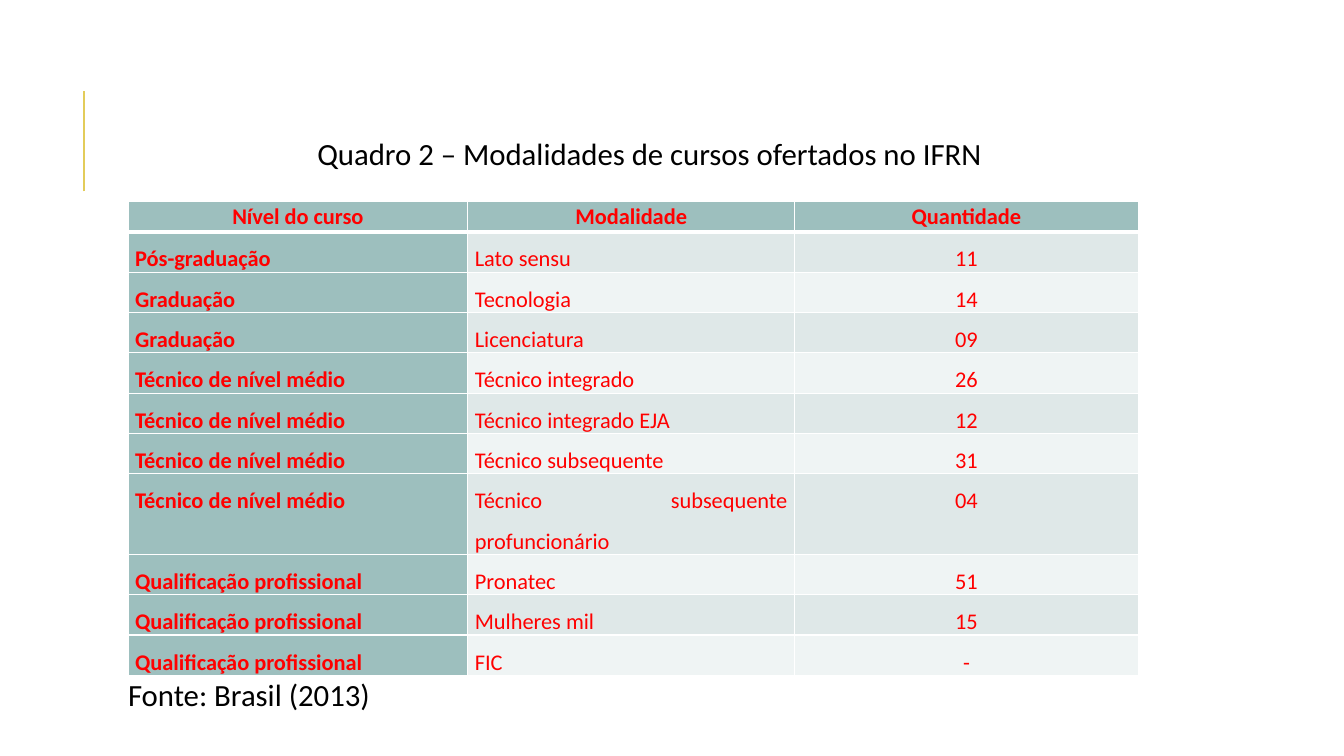
from dataclasses import dataclass

from lxml import etree
from pptx import Presentation
from pptx.dml.color import RGBColor
from pptx.enum.shapes import MSO_CONNECTOR
from pptx.enum.text import PP_ALIGN
from pptx.oxml.ns import qn
from pptx.util import Inches, Pt

LEFT, MID, FULL = PP_ALIGN.LEFT, PP_ALIGN.CENTER, PP_ALIGN.JUSTIFY
LINE = MSO_CONNECTOR.STRAIGHT
WIDE, HIGH = Inches(13.33), Inches(7.5)


@dataclass(frozen=True)
class Theme:
    """Colours, font and type sizes of the slide."""
    font: str = "Calibri"
    ink: str = "000000"
    red: str = "FF0000"
    gold: str = "E3CC5A"
    white: str = "FFFFFF"
    teal: str = "9DBFBE"
    bands: tuple = ("DFE8E8", "EFF4F4")
    big: int = 22
    small: int = 16


THEME = Theme()
COLS = (25.28, 24.31, 25.58)
HEAD = ("Nível do curso", "Modalidade", "Quantidade")
TECH, QUAL = "Técnico de nível médio", "Qualificação profissional"
ROWS = (
    ("Pós-graduação", "Lato sensu", "11"),
    ("Graduação", "Tecnologia", "14"),
    ("Graduação", "Licenciatura", "09"),
    (TECH, "Técnico integrado", "26"),
    (TECH, "Técnico integrado EJA", "12"),
    (TECH, "Técnico subsequente", "31"),
    (TECH, "Técnico subsequente profuncionário", "04"),
    (QUAL, "Pronatec", "51"),
    (QUAL, "Mulheres mil", "15"),
    (QUAL, "FIC", "-"),
)
HEAD_ROW, ROW, TALL_ROW, TALL = 4, 5.2, 9.87, 7


def across(share):
    """Turn a percentage of the slide's width into a length."""
    return round(WIDE * share / 100)


def down(share):
    """Turn a percentage of the slide's height into a length."""
    return round(HIGH * share / 100)


def write(frame, text, size=THEME.big, color=THEME.ink, bold=False,
          align=LEFT, space=0.8):
    """Put one formatted paragraph into a text frame."""
    para = frame.paragraphs[0]
    para.alignment, para.line_spacing = align, space
    run = para.add_run()
    run.text = text
    run.font.name, run.font.size, run.font.bold = THEME.font, Pt(size), bold
    run.font.color.rgb = RGBColor.from_string(color)


def label(slide, text, left, top, width, **form):
    """Add a one-line text box."""
    box = slide.shapes.add_textbox(across(left), down(top), across(width), down(5.3))
    frame = box.text_frame
    frame.word_wrap = True
    frame.margin_left = frame.margin_right = Inches(0.05)
    frame.margin_top = frame.margin_bottom = Inches(0.05)
    write(frame, text, **form)


def accent(slide, left, top, bottom):
    """Draw the upright accent line."""
    line = slide.shapes.add_connector(
        LINE, across(left), down(bottom), across(left), down(top))
    line.line.color.rgb = RGBColor.from_string(THEME.gold)
    line.line.width = Pt(1.5)
    etree.SubElement(line._element.spPr, qn("a:effectLst"))


def border(cell, base):
    """Give a cell white borders with a chosen bottom width."""
    props = cell._tc.get_or_add_tcPr()
    for side, width in (("L", 1), ("R", 1), ("T", 1), ("B", base)):
        edge = etree.SubElement(props, qn(f"a:ln{side}"), w=str(Pt(width)))
        fill = etree.SubElement(edge, qn("a:solidFill"))
        etree.SubElement(fill, qn("a:srgbClr"), val=THEME.white)


def fill_cell(cell, text, color, base, **form):
    """Set the text, fill, insets and borders of a cell."""
    cell.margin_left = cell.margin_right = Inches(0.07)
    cell.margin_top = cell.margin_bottom = 0
    border(cell, base)
    cell.fill.solid()
    cell.fill.fore_color.rgb = RGBColor.from_string(color)
    write(cell.text_frame, text, size=THEME.small, color=THEME.red, **form)


def courses(slide, left, top):
    """Add the table of courses."""
    heights = [HEAD_ROW] + [ROW] * len(ROWS)
    heights[TALL] = TALL_ROW
    table = slide.shapes.add_table(
        len(heights), len(COLS), across(left), down(top),
        across(sum(COLS)), down(sum(heights))).table
    table.first_col = True
    for column, share in zip(table.columns, COLS):
        column.width = across(share)
    for row, share in zip(table.rows, heights):
        row.height = down(share)
    for col, text in enumerate(HEAD):
        fill_cell(table.cell(0, col), text, THEME.teal, 3,
                  bold=True, align=MID, space=1.07)
    for num, row in enumerate(ROWS):
        band = THEME.bands[num % 2]
        for col, text in enumerate(row):
            fill_cell(table.cell(num + 1, col), text,
                      band if col else THEME.teal, 1, bold=col == 0,
                      align=MID if col == 2 else FULL, space=1.5)


def main():
    """Build and save the slide."""
    deck = Presentation()
    deck.slide_width, deck.slide_height = WIDE, HIGH
    slide = deck.slides.add_slide(deck.slide_layouts[6])
    accent(slide, 6.25, 12, 25.33)
    label(slide, "Quadro 2 – Modalidades de cursos ofertados no IFRN",
          8.45, 18.13, 79.75, align=MID)
    label(slide, "Fonte: Brasil (2013)", 9.15, 89.73, 40)
    courses(slide, 9.53, 26.67)
    deck.save("out.pptx")


if __name__ == "__main__":
    main()
